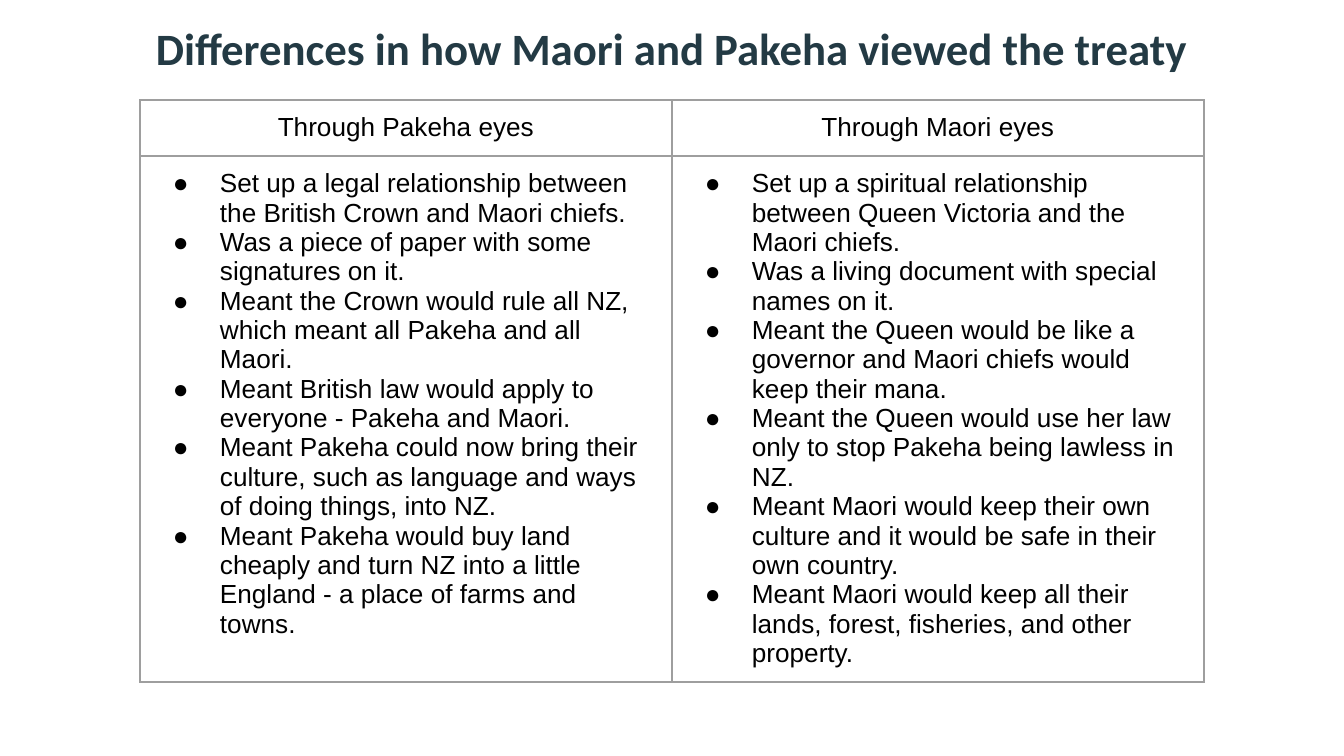
from lxml.etree import SubElement
from pptx import Presentation
from pptx.dml.color import RGBColor
from pptx.enum.text import MSO_ANCHOR, MSO_AUTO_SIZE, PP_ALIGN
from pptx.oxml.ns import qn
from pptx.util import Pt

EMU_PER_PIXEL = 6804
INSET = 13
HEADINGS = ["Through Pakeha eyes", "Through Maori eyes"]
PAKEHA_VIEWS = [
    "Set up a legal relationship between the British Crown and Maori chiefs.",
    "Was a piece of paper with some signatures on it.",
    "Meant the Crown would rule all NZ, which meant all Pakeha and all Maori.",
    "Meant British law would apply to everyone - Pakeha and Maori.",
    "Meant Pakeha could now bring their culture, such as language and ways of doing things, into NZ.",
    "Meant Pakeha would buy land cheaply and turn NZ into a little England - a place of farms and towns.",
]
MAORI_VIEWS = [
    "Set up a spiritual relationship between Queen Victoria and the Maori chiefs.",
    "Was a living document with special names on it.",
    "Meant the Queen would be like a governor and Maori chiefs would keep their mana.",
    "Meant the Queen would use her law only to stop Pakeha being lawless in NZ.",
    "Meant Maori would keep their own culture and it would be safe in their own country.",
    "Meant Maori would keep all their lands, forest, fisheries, and other property.",
]


def px(length):
    """Turn whole pixels into EMU."""
    return length * EMU_PER_PIXEL


def colour(value):
    """Turn a hex string into a colour."""
    return RGBColor.from_string(value)


def set_margins(holder):
    """Give a cell or text frame equal insets."""
    holder.margin_left = holder.margin_right = px(INSET)
    holder.margin_top = holder.margin_bottom = px(INSET)


def add_span(para, text, size, font, shade, bold=False):
    """Add one formatted run to a paragraph."""
    span = para.add_run()
    span.text = text
    span.font.size = Pt(size)
    span.font.name = font
    span.font.bold = bold
    span.font.color.rgb = colour(shade)


def add_bullet(para):
    """Give a paragraph a hanging round bullet."""
    properties = para._p.get_or_add_pPr()
    properties.set("marL", str(px(67)))
    properties.set("indent", str(px(-47)))
    shade = SubElement(properties, qn("a:buClr"))
    SubElement(shade, qn("a:srgbClr"), val="000000")
    SubElement(properties, qn("a:buFont"), typeface="Arial")
    SubElement(properties, qn("a:buChar"), char="●")


def add_borders(cell):
    """Draw a thin grey line on each side of a cell."""
    properties = cell._tc.get_or_add_tcPr()
    for side in ("L", "R", "T", "B"):
        line = SubElement(properties, qn(f"a:ln{side}"), w=str(Pt(0.75)))
        fill = SubElement(line, qn("a:solidFill"))
        SubElement(fill, qn("a:srgbClr"), val="9E9E9E")


def fill_cell(cell, lines, bulleted):
    """Format a cell and write its lines as bullets or a centred heading."""
    add_borders(cell)
    cell.fill.background()
    set_margins(cell)
    for index, text in enumerate(lines):
        para = cell.text_frame.add_paragraph() if index else cell.text_frame.paragraphs[0]
        if bulleted:
            add_bullet(para)
        else:
            para.alignment = PP_ALIGN.CENTER
        add_span(para, text, 14, "Arial", "000000")


def add_title(page, text):
    """Place and format the slide title."""
    box = page.shapes.title
    box.left, box.top, box.width, box.height = px(7), px(8), px(1329), px(52)
    frame = box.text_frame
    frame.word_wrap = True
    frame.auto_size = MSO_AUTO_SIZE.NONE
    frame.vertical_anchor = MSO_ANCHOR.TOP
    set_margins(frame)
    para = frame.paragraphs[0]
    para.alignment = PP_ALIGN.CENTER
    add_span(para, text, 24, "Calibri", "233A44", bold=True)


def add_comparison(page, headings, views):
    """Add a table with a heading and a bullet list in each column."""
    shape = page.shapes.add_table(2, len(headings), px(140), px(100), px(1064), px(582))
    table = shape.table
    table.first_row = table.horz_banding = False
    table.rows[0].height, table.rows[1].height = px(56), px(526)
    for index, (heading, lines) in enumerate(zip(headings, views)):
        table.columns[index].width = px(532)
        fill_cell(table.cell(0, index), [heading], bulleted=False)
        fill_cell(table.cell(1, index), lines, bulleted=True)


def main():
    """Build and save the deck."""
    deck = Presentation()
    deck.slide_width, deck.slide_height = px(1344), px(756)
    page = deck.slides.add_slide(deck.slide_layouts[5])
    add_comparison(page, HEADINGS, [PAKEHA_VIEWS, MAORI_VIEWS])
    add_title(page, "Differences in how Maori and Pakeha viewed the treaty")
    deck.save("out.pptx")


if __name__ == "__main__":
    main()
